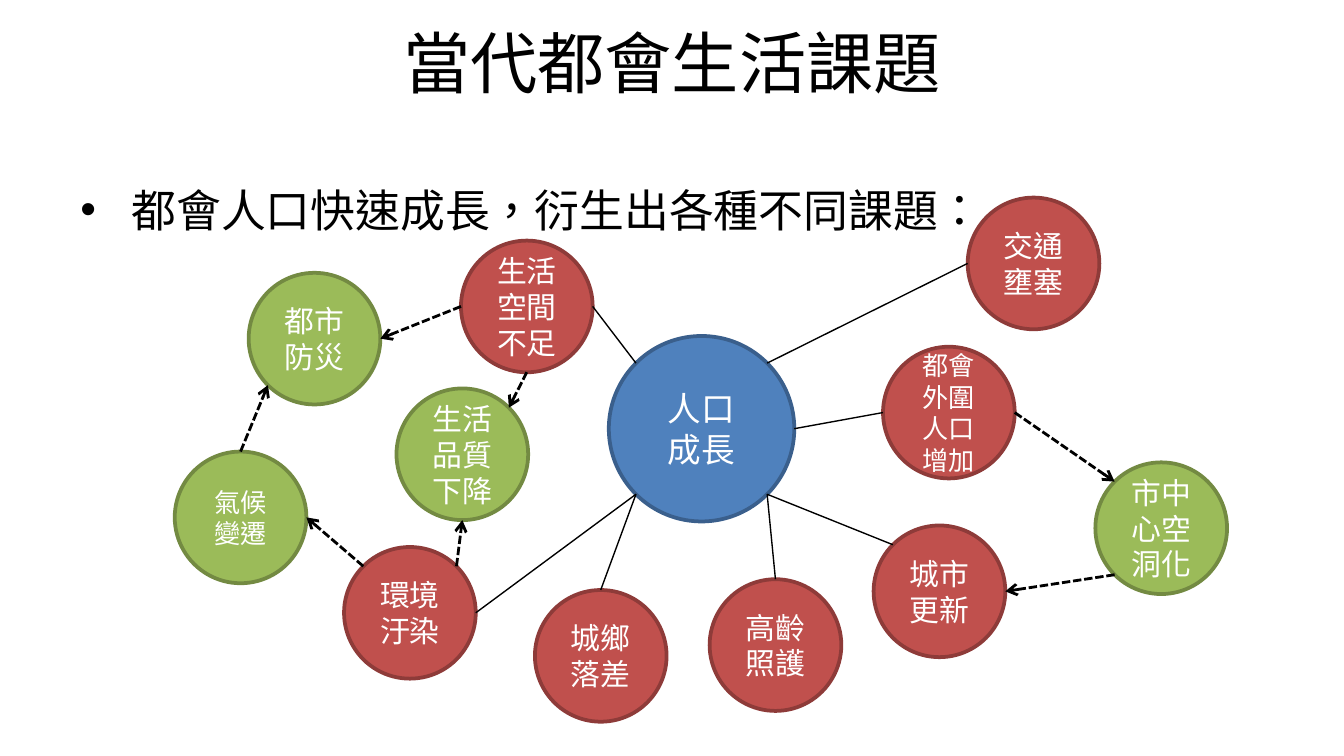
"""Build a slide that maps the issues arising from urban population growth."""
from dataclasses import dataclass
from math import cos, radians, sin

from lxml.etree import SubElement
from pptx import Presentation
from pptx.dml.color import RGBColor as Color
from pptx.enum.dml import MSO_LINE_DASH_STYLE as Dash
from pptx.enum.lang import MSO_LANGUAGE_ID as Language
from pptx.enum.shapes import MSO_CONNECTOR as Connector, MSO_SHAPE as Shape
from pptx.enum.text import MSO_ANCHOR as Anchor, PP_ALIGN as Align
from pptx.oxml.ns import qn
from pptx.util import Inches, Pt


@dataclass(frozen=True)
class Theme:
    """Colours, fonts and sizes of the slide."""
    ink: str = "000000"
    paper: str = "FFFFFF"
    hub: tuple = ("4F81BD", "3A5F8C")
    issue: tuple = ("C0504D", "8E3B39")
    effect: tuple = ("9BBB59", "738A42")
    cjk: str = "Noto Sans CJK SC"
    latin: str = "Calibri"
    bullet: str = "Arial"
    title: int = 36
    body: int = 24
    hub_text: int = 18
    label: int = 16
    small: int = 14
    outline: float = 2
    link: float = 0.75
    arrow: float = 1.5


THEME = Theme()
HUB_SIZE, NODE_SIZE = 1.38, 0.98
ANGLES = {"E": 0, "SE": 45, "S": 90, "SW": 135, "W": 180, "NW": 225, "N": 270, "NE": 315}

NODES = {
    "growth": (4.53, 2.5, HUB_SIZE, THEME.hub, THEME.hub_text, THEME.latin, "人口\n成長"),
    "suburbs": (6.57, 2.58, NODE_SIZE, THEME.issue, THEME.small, THEME.cjk, "都會外圍人口增加"),
    "hollowing": (8.15, 3.44, NODE_SIZE, THEME.effect, THEME.label, THEME.cjk, "市中心空洞化"),
    "pollution": (2.56, 4.07, NODE_SIZE, THEME.issue, THEME.label, THEME.cjk, "環境\n汙染"),
    "quality": (2.95, 2.89, NODE_SIZE, THEME.effect, THEME.label, THEME.cjk, "生活品質下降"),
    "rural gap": (3.98, 4.39, NODE_SIZE, THEME.issue, THEME.label, THEME.cjk, "城鄉\n落差"),
    "elder care": (5.28, 4.31, NODE_SIZE, THEME.issue, THEME.label, THEME.cjk, "高齡\n照護"),
    "renewal": (6.5, 3.91, NODE_SIZE, THEME.issue, THEME.label, THEME.cjk, "城市\n更新"),
    "disaster": (1.85, 2.03, NODE_SIZE, THEME.effect, THEME.label, THEME.cjk, "都市\n防災"),
    "climate": (1.3, 3.36, NODE_SIZE, THEME.effect, THEME.small, THEME.cjk, "氣候\n變遷"),
    "traffic": (7.2, 1.47, NODE_SIZE, THEME.issue, THEME.label, THEME.cjk, "交通壅塞"),
    "space": (3.43, 1.79, NODE_SIZE, THEME.issue, THEME.label, THEME.cjk, "生活空間不足"),
}

LINKS = [
    ("SW", "pollution", "E"),
    ("E", "suburbs", "W"),
    ("SW", "rural gap", "N"),
    ("SE", "elder care", "N"),
    ("SE", "renewal", "NW"),
    ("NE", "traffic", "W"),
    ("NW", "space", "E"),
]

ARROWS = [
    ("hollowing", "SW", "renewal", "E"),
    ("suburbs", "E", "hollowing", "NW"),
    ("pollution", "NE", "quality", "S"),
    ("climate", "N", "disaster", "SW"),
    ("space", "W", "disaster", "E"),
    ("space", "S", "quality", "NE"),
    ("pollution", "NW", "climate", "E"),
]


def apply(target, formats):
    """Set each attribute of the target from a dict."""
    for name, value in formats.items():
        setattr(target, name, value)


def write(frame, text, size, font, color, align, anchor):
    """Fill a text frame, one paragraph per line of text."""
    apply(frame, {"word_wrap": True, "vertical_anchor": anchor})
    for index, line in enumerate(text.split("\n")):
        para = frame.add_paragraph() if index else frame.paragraphs[0]
        para.alignment = align
        span = para.add_run()
        span.text = line
        apply(span.font, {"size": Pt(size), "name": font,
                          "language_id": Language.TRADITIONAL_CHINESE})
        span.font.color.rgb = Color.from_string(color)
        SubElement(span.font._element, qn("a:ea"), typeface=font)


def add_text(page, bounds, text, size, align, anchor):
    """Add a text box and return its first paragraph."""
    box = page.shapes.add_textbox(*map(Inches, bounds))
    write(box.text_frame, text, size, THEME.cjk, THEME.ink, align, anchor)
    return box.text_frame.paragraphs[0]


def add_bullet(para, indent):
    """Give a paragraph a hanging bullet."""
    settings = para._p.get_or_add_pPr()
    settings.set("marL", str(Inches(indent)))
    settings.set("indent", str(-Inches(indent)))
    SubElement(settings, qn("a:buFont"), typeface=THEME.bullet)
    SubElement(settings, qn("a:buChar"), char="•")


def add_node(page, left, top, size, colors, text_size, font, text):
    """Add a labelled circle."""
    circle = page.shapes.add_shape(Shape.OVAL, *map(Inches, (left, top, size, size)))
    circle.shadow.inherit = False
    circle.fill.solid()
    fill, outline = map(Color.from_string, colors)
    circle.fill.fore_color.rgb = fill
    circle.line.color.rgb = outline
    circle.line.width = Pt(THEME.outline)
    write(circle.text_frame, text, text_size, font, THEME.paper, Align.CENTER, Anchor.MIDDLE)


def rim_point(node, side):
    """Return the point on a circle's rim at a compass side."""
    left, top, size = NODES[node][:3]
    radius, angle = size / 2, radians(ANGLES[side])
    return Inches(left + radius * (1 + cos(angle))), Inches(top + radius * (1 + sin(angle)))


def add_link(page, source, source_side, target, target_side, arrow=False):
    """Join two circles with a plain line or a dashed arrow."""
    ends = rim_point(source, source_side) + rim_point(target, target_side)
    link = page.shapes.add_connector(Connector.STRAIGHT, *ends)
    link.line.color.rgb = Color.from_string(THEME.ink)
    link.line.width = Pt(THEME.arrow if arrow else THEME.link)
    if arrow:
        link.line.dash_style = Dash.SQUARE_DOT
        SubElement(link.line._get_or_add_ln(), qn("a:tailEnd"), type="arrow")
    SubElement(link._element.spPr, qn("a:effectLst"))


def main():
    """Build and save the deck."""
    deck = Presentation()
    width = Inches(10)
    apply(deck, {"slide_width": width, "slide_height": width * 9 // 16})
    page = deck.slides.add_slide(deck.slide_layouts[6])
    add_text(page, (0.5, 0.07, 9, 0.78), "當代都會生活課題", THEME.title, Align.CENTER, Anchor.MIDDLE)
    lead = add_text(page, (0.5, 1.31, 9, 4.31), "都會人口快速成長，衍生出各種不同課題：",
                    THEME.body, Align.LEFT, Anchor.TOP)
    add_bullet(lead, 0.38)
    for node in NODES.values():
        add_node(page, *node)
    for side, target, target_side in LINKS:
        add_link(page, "growth", side, target, target_side)
    for arrow in ARROWS:
        add_link(page, *arrow, arrow=True)
    deck.save("out.pptx")


if __name__ == "__main__":
    main()
